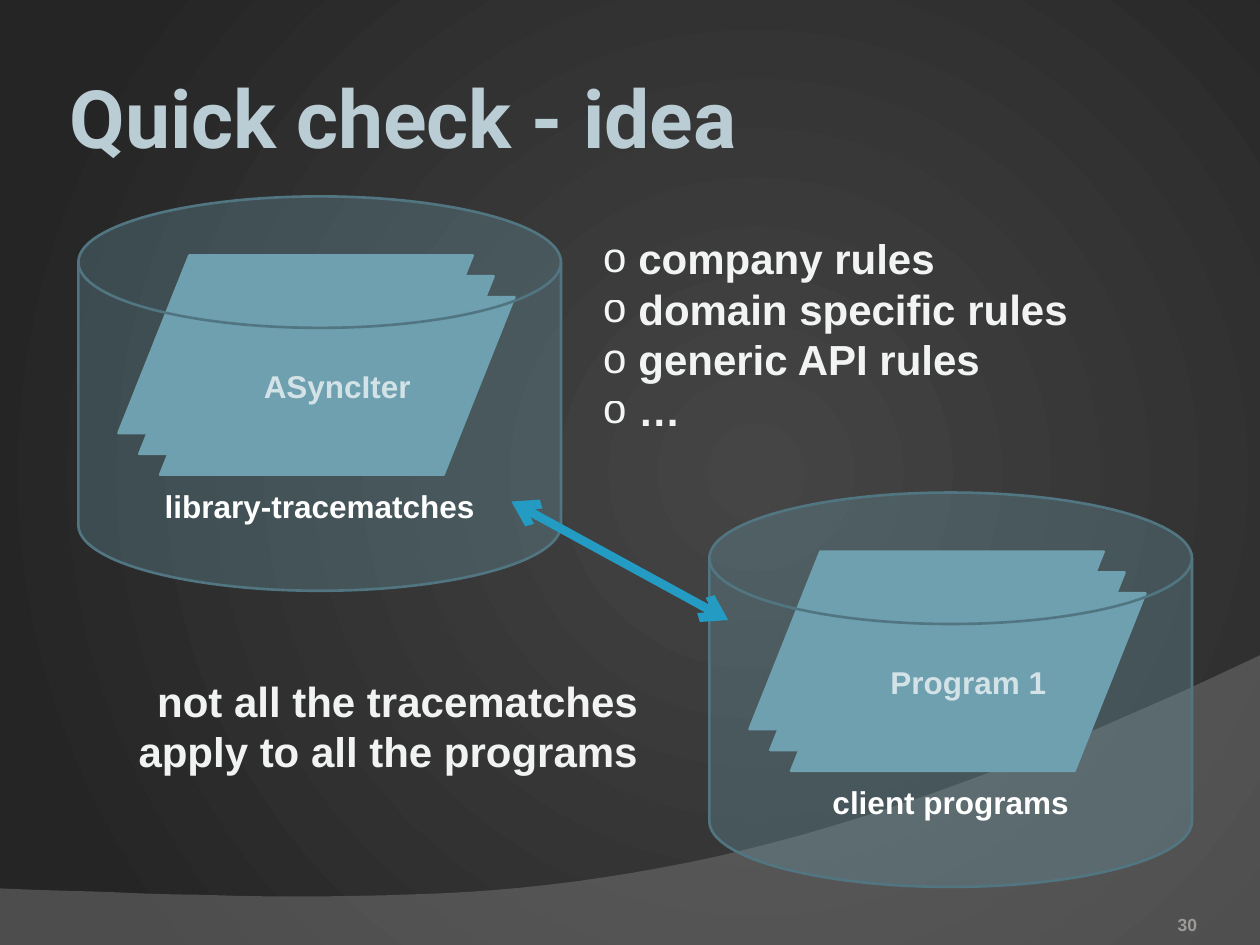
"""Build the "Quick check - idea" slide."""
from dataclasses import dataclass
from lxml.etree import SubElement
from pptx import Presentation
from pptx.dml.color import RGBColor
from pptx.enum.shapes import MSO_CONNECTOR, MSO_SHAPE as SHAPE
from pptx.enum.text import MSO_ANCHOR as ANCHOR, PP_ALIGN as ALIGN
from pptx.oxml.ns import qn
from pptx.util import Cm, Pt

COLORS = {
    "glow": "454545", "edge": "252525", "wave": "7F7F7F", "title": "BACDD4",
    "sheet": "6EA0B0", "rim": "517682", "white": "FFFFFF", "body": "FCFDFD",
    "arrow": "239BC2", "number": "9D9B9A",
}
WIDTH, HEIGHT = 25.4, 19.05
SHEETS, SHEET_STEP = 3, 0.42


@dataclass
class Box:
    x: float
    y: float
    w: float
    h: float

    def emu(self) -> tuple:
        return Cm(self.x), Cm(self.y), Cm(self.w), Cm(self.h)


@dataclass
class Store:
    x: float
    y: float
    sheet_text: str
    label: str


STORES = [
    Store(1.58, 3.96, "ASyncIter", "library-tracematches"),
    Store(14.3, 9.93, "Program 1", "client programs"),
]
RULES = ["company rules", "domain specific rules", "generic API rules", "…"]


def rgb(name: str) -> RGBColor:
    return RGBColor.from_string(COLORS[name])


def set_alpha(fill_parent, percent: int) -> None:
    clr = fill_parent.find(qn("a:solidFill"))[0]
    SubElement(clr, qn("a:alpha"), val=str(percent * 1000))


def add_run(p, text: str, size: float, color: str, font: str = "Arial"):
    r = p.add_run()
    r.text = text
    r.font.size, r.font.name, r.font.bold = Pt(size), font, True
    r.font.color.rgb = rgb(color)
    return r


def add_body_run(p, text: str) -> None:
    r = add_run(p, text, 24, "body")
    set_alpha(r.font._element, 95)


def add_frame(slide, box: Box):
    tf = slide.shapes.add_textbox(*box.emu()).text_frame
    tf.word_wrap = True
    return tf


def add_solid(slide, kind, box: Box, fill: str, line: str):
    sp = slide.shapes.add_shape(kind, *box.emu())
    sp.shadow.inherit = False
    sp.fill.solid()
    sp.fill.fore_color.rgb = rgb(fill)
    sp.line.color.rgb = rgb(line)
    sp.line.width = Pt(1.5)
    return sp


def add_label(sp, text: str, anchor) -> None:
    tf = sp.text_frame
    tf.vertical_anchor = anchor
    p = tf.paragraphs[0]
    p.alignment = ALIGN.CENTER
    add_run(p, text, 18, "white")


def add_store(slide, store: Store) -> None:
    for i in range(SHEETS):
        shift = i * SHEET_STEP
        box = Box(store.x + 0.81 + shift, store.y + 1.19 + shift, 7.14, 3.58)
        sheet = add_solid(slide, SHAPE.FLOWCHART_DATA, box, "sheet", "sheet")
    add_label(sheet, store.sheet_text, ANCHOR.MIDDLE)
    disk = add_solid(slide, SHAPE.FLOWCHART_MAGNETIC_DISK,
                     Box(store.x, store.y, 9.73, 7.95), "sheet", "rim")
    set_alpha(disk._element.spPr, 30)
    disk.text_frame.margin_bottom = 0
    add_label(disk, store.label, ANCHOR.BOTTOM)


def add_background(slide) -> None:
    fill = slide.background.fill
    fill.gradient()
    for stop, name in zip(fill.gradient_stops, ("glow", "edge")):
        stop.color.rgb = rgb(name)
    grad = slide.background._cSld.find(".//" + qn("a:gradFill"))
    grad.remove(grad.find(qn("a:lin")))
    radial = SubElement(grad, qn("a:path"), path="circle")
    SubElement(radial, qn("a:fillToRect"), l="60000", t="50000", r="40000", b="50000")


def add_wave(slide, steps: int = 40) -> None:
    curve = [(25.4, 13.21), (14.2, 18.52), (9.93, 18.26), (0, 17.91)]
    points = [(WIDTH, HEIGHT)]
    for i in range(steps + 1):
        t = i / steps
        weights = ((1 - t) ** 3, 3 * t * (1 - t) ** 2, 3 * t * t * (1 - t), t ** 3)
        points.append(tuple(sum(w * pt[k] for w, pt in zip(weights, curve)) for k in (0, 1)))
    builder = slide.shapes.build_freeform(0, round(HEIGHT * 100), scale=Cm(0.01))
    builder.add_line_segments([(round(x * 100), round(y * 100)) for x, y in points])
    sp = builder.convert_to_shape()
    sp.shadow.inherit = False
    sp.fill.solid()
    sp.fill.fore_color.rgb = rgb("wave")
    set_alpha(sp._element.spPr, 45)
    sp.line.fill.background()


def add_title(slide, text: str) -> None:
    sp = slide.shapes.title
    sp.left, sp.top, sp.width, sp.height = Box(1.27, 0.76, 22.86, 3.18).emu()
    tf = sp.text_frame
    tf.vertical_anchor = ANCHOR.MIDDLE
    tf.margin_left = tf.margin_right = tf.margin_top = tf.margin_bottom = Cm(0.13)
    p = tf.paragraphs[0]
    p.alignment = ALIGN.LEFT
    add_run(p, text, 46, "title", "Roboto")


def add_rules(slide) -> None:
    tf = add_frame(slide, Box(11.91, 4.57, 10.52, 4.37))
    for i, rule in enumerate(RULES):
        p = tf.add_paragraph() if i else tf.paragraphs[0]
        pPr = p._p.get_or_add_pPr()
        pPr.set("marL", str(Cm(0.71)))
        pPr.set("indent", str(-Cm(0.71)))
        SubElement(pPr, qn("a:buFont"), typeface="Arial")
        SubElement(pPr, qn("a:buChar"), char="o")
        add_body_run(p, rule)


def add_arrow(slide) -> None:
    line = slide.shapes.add_connector(
        MSO_CONNECTOR.STRAIGHT, Cm(10.31), Cm(10.11), Cm(14.68), Cm(12.5))
    line.line.color.rgb = rgb("arrow")
    line.line.width = Pt(5)
    ln = line.line._get_or_add_ln()
    for end in ("a:headEnd", "a:tailEnd"):
        SubElement(ln, qn(end), type="arrow")
    SubElement(line._element.spPr, qn("a:effectLst"))


def main() -> None:
    prs = Presentation()
    prs.slide_width, prs.slide_height = Cm(WIDTH), Cm(HEIGHT)
    slide = prs.slides.add_slide(prs.slide_layouts[5])
    add_background(slide)
    add_wave(slide)
    add_title(slide, "Quick check - idea")
    for store in STORES:
        add_store(slide, store)
    add_rules(slide)

    p = add_frame(slide, Box(1.98, 13.49, 11.13, 2.31)).paragraphs[0]
    p.alignment = ALIGN.RIGHT
    add_body_run(p, "not all the tracematches apply to all the programs")
    add_arrow(slide)

    tf = add_frame(slide, Box(22.02, 17.83, 2.11, 1.02))
    tf.margin_left = tf.margin_right = tf.margin_top = tf.margin_bottom = 0
    tf.vertical_anchor = ANCHOR.BOTTOM
    tf.paragraphs[0].alignment = ALIGN.RIGHT
    add_run(tf.paragraphs[0], "30", 10, "number")
    prs.save("out.pptx")


if __name__ == "__main__":
    main()
